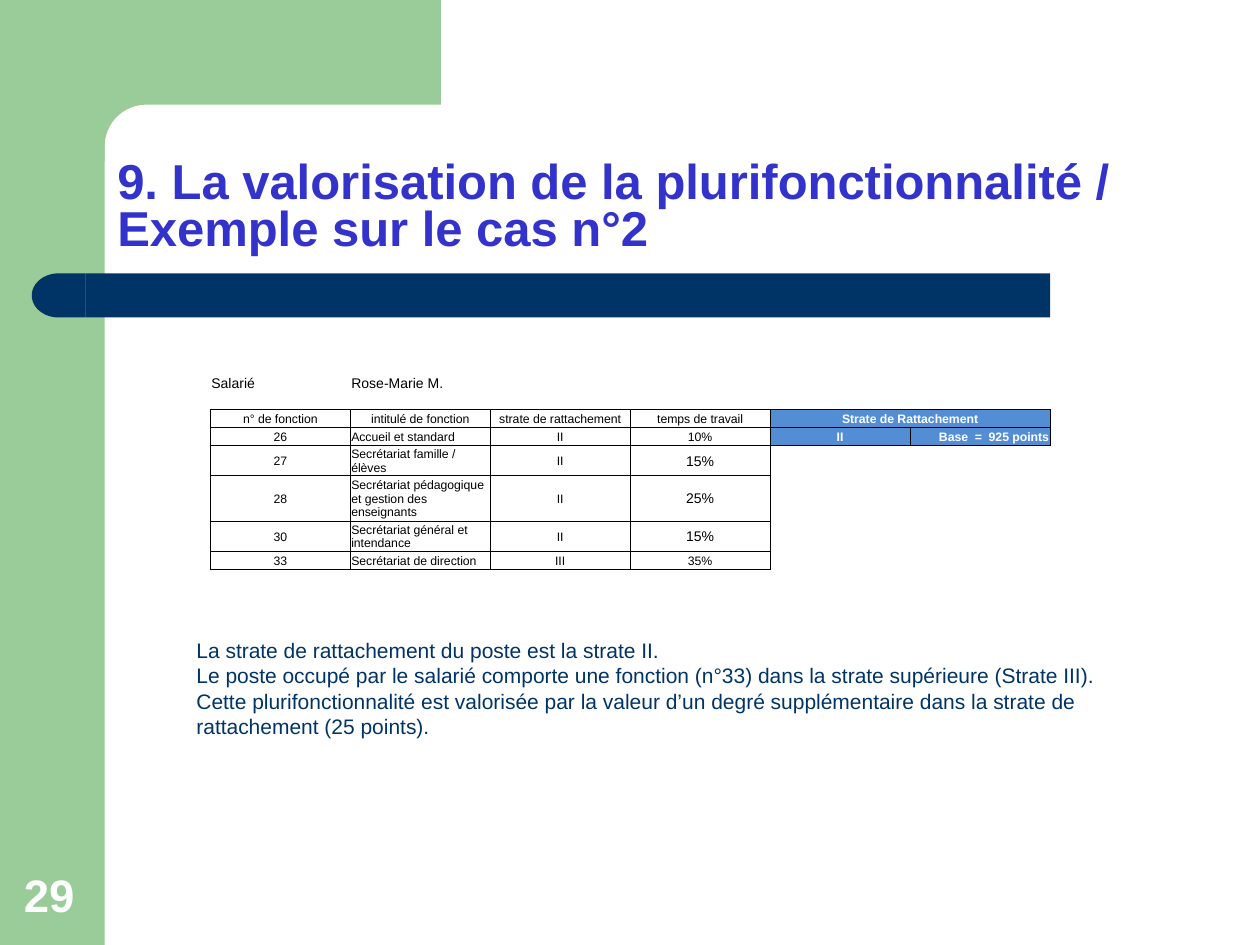
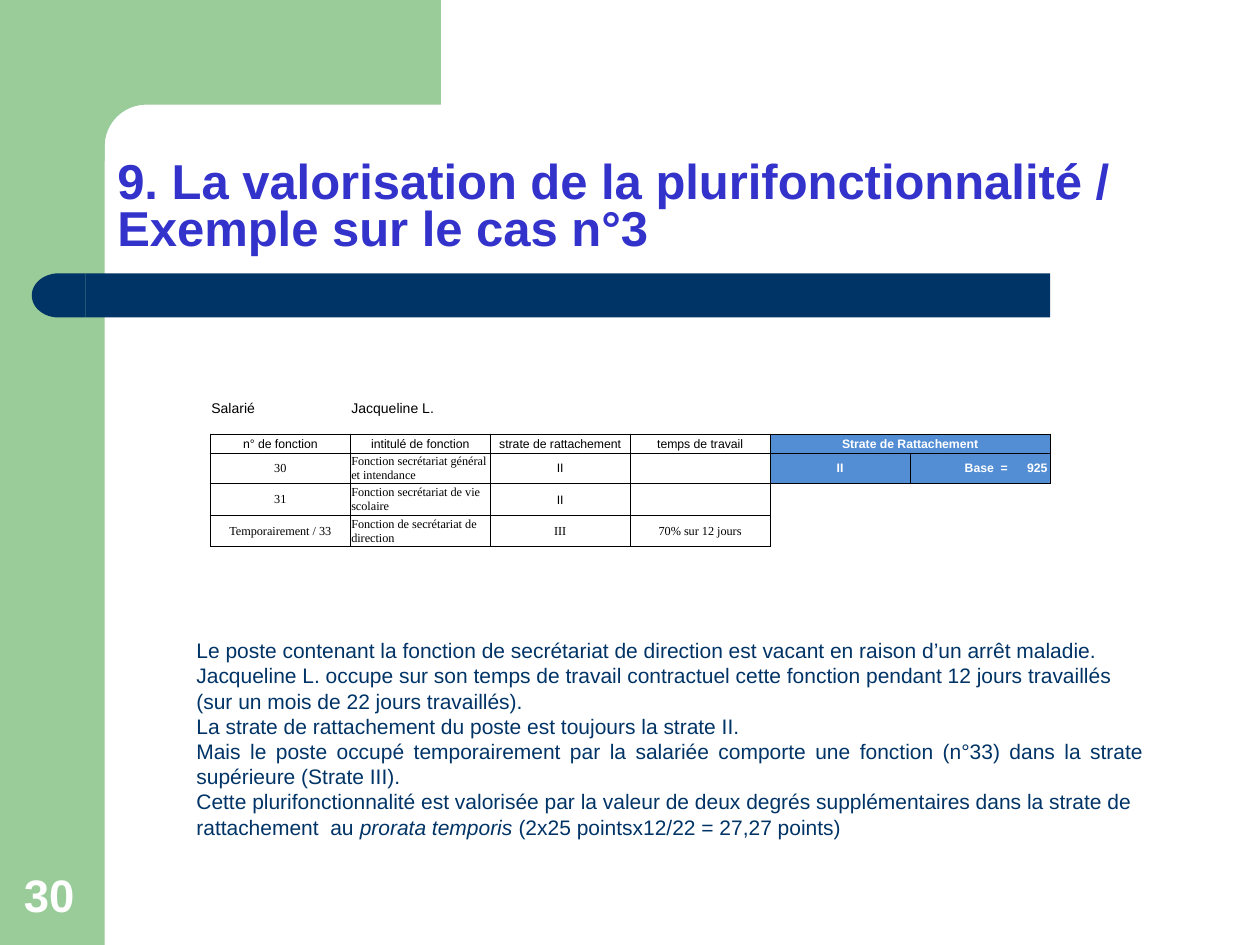
"""Build two slides on how multi-function posts are valued."""
import math

from lxml import etree
from pptx import Presentation
from pptx import util as u
from pptx.dml.color import RGBColor
from pptx.enum import shapes, text
from pptx.oxml import ns

COLORS = {
    "band": "99CC99",
    "bar": "003366",
    "title": "3333CC",
    "body": "003366",
    "header": "538ED5",
    "black": "000000",
    "white": "FFFFFF",
}
SERIF = "Times New Roman"
NO_STYLE = "{2D5ABB26-0587-4C30-8999-92F81FD0307C}"
ALIGN = text.PP_ALIGN
COL_ALIGN = [ALIGN.CENTER, ALIGN.LEFT] + [ALIGN.CENTER] * 3 + [ALIGN.RIGHT]
HEADINGS = ["n° de fonction", "intitulé de fonction", "strate de rattachement",
            "temps de travail", "Strate de Rattachement"]
TITLE = "9. La valorisation de la plurifonctionnalité / Exemple sur le cas n°"


def rgb(name):
    """Return the palette colour called name."""
    return RGBColor.from_string(COLORS[name])


def add_run(p, value, size, color, font="Arial", bold=False, italic=False):
    """Append one formatted run to a paragraph."""
    r = p.add_run()
    r.text = value
    f = r.font
    f.size, f.name, f.bold, f.italic = u.Pt(size), font, bold, italic
    f.color.rgb = rgb(color)


def paint(sp, color):
    """Give a shape a flat fill without line or shadow."""
    sp.fill.solid()
    sp.fill.fore_color.rgb = rgb(color)
    sp.line.fill.background()
    sp.shadow.inherit = False


def add_block(sl, kind, box, color):
    """Add a flat preset shape in a box given in centimetres."""
    sp = sl.shapes.add_shape(kind, *map(u.Cm, box))
    paint(sp, color)
    return sp


def add_frame(sl, box):
    """Draw the side band and its rounded top corner in box."""
    left, top, width, height = box
    add_block(sl, shapes.MSO_SHAPE.RECTANGLE, (left, top, 2.11, height), "band")
    radius, inner = 0.84, 2.11
    points = [(8.89, 0), (8.89, inner)]
    for step in range(13):
        a = math.radians(90 * step / 12)
        points.append((inner + radius * (1 - math.sin(a)),
                       inner + radius * (1 - math.cos(a))))
    points += [(inner, 3.25), (1.27, 3.25), (1.27, 0)]
    points = [(u.Cm(left + x), u.Cm(top + y)) for x, y in points]
    fb = sl.shapes.build_freeform(*points[0])
    fb.add_line_segments(points[1:])
    paint(fb.convert_to_shape(), "band")


def add_bar(sl, box):
    """Draw the bar with its round left end in box."""
    left, top, width, height = box
    cap = 1.08
    add_block(sl, shapes.MSO_SHAPE.RECTANGLE,
              (left + cap, top, width - cap, height), "bar")
    sp = add_block(sl, shapes.MSO_SHAPE.FLOWCHART_DELAY,
                   (left, top, cap, height), "bar")
    sp.rotation = 180


def add_title(sl, box, value):
    """Place and format the title placeholder in box."""
    sp = sl.shapes.title
    sp.left, sp.top, sp.width, sp.height = map(u.Cm, box)
    tf = sp.text_frame
    tf.auto_size = text.MSO_AUTO_SIZE.NONE
    tf.vertical_anchor = text.MSO_ANCHOR.BOTTOM
    p = tf.paragraphs[0]
    p.alignment, p.line_spacing = ALIGN.LEFT, 0.8
    add_run(p, value, 28, "title", bold=True)


def add_number(sl, box, number):
    """Write the slide number in box."""
    tf = sl.shapes.add_textbox(*map(u.Cm, box)).text_frame
    tf.vertical_anchor = text.MSO_ANCHOR.BOTTOM
    tf.word_wrap = True
    add_run(tf.paragraphs[0], str(number), 26, "white", bold=True)


def add_borders(cell):
    """Draw a thin black line on the four sides of a cell."""
    pr = cell._tc.get_or_add_tcPr()
    for side in ("lnL", "lnR", "lnT", "lnB"):
        ln = etree.SubElement(pr, ns.qn("a:" + side), w=str(u.Pt(0.5)))
        fill = etree.SubElement(ln, ns.qn("a:solidFill"))
        etree.SubElement(fill, ns.qn("a:srgbClr"), val=COLORS["black"])


def add_tabs(p, stops):
    """Set right-aligned tab stops, in centimetres."""
    tabs = etree.SubElement(p._p.get_or_add_pPr(), ns.qn("a:tabLst"))
    for stop in stops:
        etree.SubElement(tabs, ns.qn("a:tab"), pos=str(u.Cm(stop)), algn="r")


def fill_cell(cell, row, col, value):
    """Write and format one cell of the employee table."""
    value, size, font = value if isinstance(value, tuple) else (value, 7, "Arial")
    cell.margin_left = cell.margin_right = cell.margin_top = u.Cm(0.02)
    cell.margin_bottom = 0
    cell.vertical_anchor = text.MSO_ANCHOR.BOTTOM if row == 0 else text.MSO_ANCHOR.MIDDLE
    strata = col > 3 and row in (2, 3)
    if strata or (row > 1 and col < 4):
        add_borders(cell)
    if strata:
        cell.fill.solid()
        cell.fill.fore_color.rgb = rgb("header")
    else:
        cell.fill.background()
    p = cell.text_frame.paragraphs[0]
    if not value:
        p._p.get_or_add_endParaRPr().set("sz", "700")
        return
    p.alignment = ALIGN.CENTER if row == 2 else COL_ALIGN[col]
    if row == 0 or "\t" in value:
        p.alignment = ALIGN.LEFT
    if "\t" in value:
        add_tabs(p, (1.95, 2.75))
    add_run(p, value, 8 if row == 0 else size,
            "white" if strata else "black", font, bold=strata)


def add_employee_table(sl, box, employee, heights, functions):
    """Add the table of an employee's functions, with rows of given heights."""
    left, top, width = box
    rows = [["Salarié", employee], [], HEADINGS] + functions
    shape = sl.shapes.add_table(len(rows), 6, *map(u.Cm, (left, top, width, sum(heights))))
    tb = shape.table
    tb._tbl.tblPr.find(ns.qn("a:tableStyleId")).text = NO_STYLE
    tb.first_row = tb.horz_banding = False
    for column in tb.columns:
        column.width = u.Cm(width / 6)
    for i, (values, height) in enumerate(zip(rows, heights)):
        tb.rows[i].height = u.Cm(height)
        for j in range(6):
            fill_cell(tb.cell(i, j), i, j, values[j] if j < len(values) else "")
    tb.cell(2, 4).merge(tb.cell(2, 5))


def add_comment(sl, box, paragraphs):
    """Write the explanation in box, from (alignment, runs) pairs."""
    tf = sl.shapes.add_textbox(*map(u.Cm, box)).text_frame
    tf.word_wrap = True
    for i, (align, runs) in enumerate(paragraphs):
        p = tf.add_paragraph() if i else tf.paragraphs[0]
        p.alignment = align
        for value, italic in runs:
            add_run(p, value, 12, "body", italic=italic)


def plain(value, align=ALIGN.LEFT):
    """Return a paragraph made of one upright run."""
    return align, [(value, False)]


def add_case(prs, number, case, table_top, employee, heights, functions, comment):
    """Add one slide that presents a case."""
    sl = prs.slides.add_slide(prs.slide_layouts[5])
    add_frame(sl, (0, 0, 25.4, 19.05))
    add_bar(sl, (0.64, 5.51, 20.53, 0.89))
    add_title(sl, (2.11, 2.82, 22.02, 2.46), f"{TITLE}{case}")
    add_number(sl, (0.23, 17.35, 1.63, 1.35), number)
    add_employee_table(sl, (4.24, table_top, 16.93), employee, heights, functions)
    add_comment(sl, (3.71, 12.73, 19.61, 1.45 * len(comment) - 1.5), comment)


def main():
    """Build and save the presentation."""
    prs = Presentation()
    prs.slide_width, prs.slide_height = u.Cm(25.4), u.Cm(19.05)
    add_case(
        prs, 29, 2, 7.54, "Rose-Marie M.",
        [0.36] * 4 + [0.61, 0.91, 0.61, 0.36],
        [
            ["26", "Accueil et standard", "II", "10%", "II", "Base  =  925 points"],
            ["27", "Secrétariat famille / élèves", "II", ("15%", 8, "Arial")],
            ["28", "Secrétariat pédagogique et gestion des enseignants", "II",
             ("25%", 8, "Arial")],
            ["30", "Secrétariat général et intendance", "II", ("15%", 8, "Arial")],
            ["33", "Secrétariat de direction", "III", "35%"],
        ],
        [
            plain("La strate de rattachement du poste est la strate II."),
            plain("Le poste occupé par le salarié comporte une fonction (n°33) "
                  "dans la strate supérieure (Strate III)."),
            plain("Cette plurifonctionnalité est valorisée par la valeur d’un degré "
                  "supplémentaire dans la strate de rattachement (25 points)."),
        ])
    add_case(
        prs, 30, 3, 8.03, "Jacqueline L.",
        [0.36, 0.36, 0.38, 0.61, 0.64, 0.64],
        [
            [("30", 7, SERIF), ("Fonction secrétariat général et intendance", 7, SERIF),
             "II", "", "II", "\tBase  =\t925"],
            [("31", 7, SERIF), ("Fonction secrétariat de vie scolaire", 7, SERIF), "II"],
            [(value, 7, SERIF) for value in
             ("Temporairement / 33", "Fonction de secrétariat de direction",
              "III", "70% sur 12 jours")],
        ],
        [
            plain("Le poste contenant la fonction de secrétariat de direction est vacant "
                  "en raison d’un arrêt maladie. Jacqueline L. occupe sur son temps de "
                  "travail contractuel cette fonction pendant 12 jours travaillés "
                  "(sur un mois de 22 jours travaillés)."),
            plain("La strate de rattachement du poste est toujours la strate II."),
            plain("Mais le poste occupé temporairement par la salariée comporte une "
                  "fonction (n°33) dans la strate supérieure (Strate III).", ALIGN.JUSTIFY),
            (ALIGN.LEFT, [
                ("Cette plurifonctionnalité est valorisée par la valeur de deux degrés "
                 "supplémentaires dans la strate de rattachement  au ", False),
                ("prorata temporis ", True),
                ("(2x25 pointsx12/22 = 27,27 points)", False),
            ]),
        ])
    prs.save("out.pptx")


if __name__ == "__main__":
    main()
